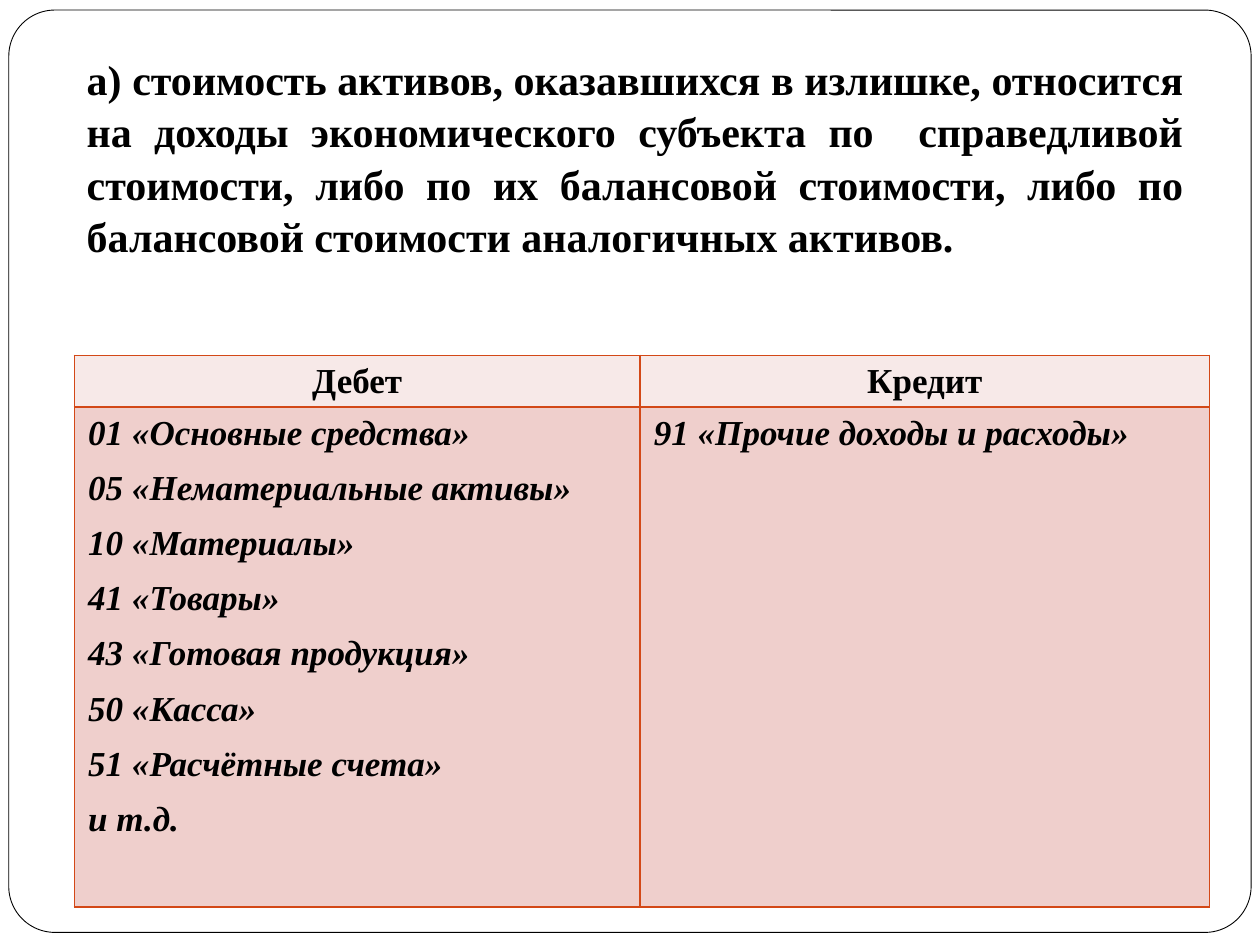
from dataclasses import dataclass

from lxml.etree import SubElement
from pptx import Presentation
from pptx.dml.color import RGBColor
from pptx.enum.shapes import MSO_SHAPE as Shape
from pptx.enum.text import PP_ALIGN as Align
from pptx.oxml.ns import qn
from pptx.util import Inches, Pt


@dataclass(frozen=True)
class Theme:
    font: str = "Times New Roman"
    ink: RGBColor = RGBColor(0, 0, 0)
    paper: RGBColor = RGBColor(255, 255, 255)
    header_fill: RGBColor = RGBColor.from_string("F7E9E8")
    body_fill: RGBColor = RGBColor.from_string("EFCFCC")
    border: str = "D34817"
    rule_size: int = 24
    table_size: int = 20


@dataclass(frozen=True)
class Side:
    title: str
    width: float
    accounts: tuple[str, ...]


THEME = Theme()
RULE = (
    "а) стоимость активов, оказавшихся в излишке, относится на доходы "
    "экономического субъекта по  справедливой стоимости, либо по их балансовой "
    "стоимости, либо по балансовой стоимости аналогичных активов."
)
SIDES = (
    Side("Дебет", 4.49, (
        "01 «Основные средства»",
        "05 «Нематериальные активы»",
        "10 «Материалы»",
        "41 «Товары»",
        "43 «Готовая продукция»",
        "50 «Касса»",
        "51 «Расчётные счета»",
        "и т.д.",
    )),
    Side("Кредит", 4.52, ("91 «Прочие доходы и расходы»",)),
)
ROW_HEIGHTS = (0.41, 3.97)


def style_runs(paragraph, size: int, italic: bool = False) -> None:
    for run in paragraph.runs:
        run.font.name = THEME.font
        run.font.size = Pt(size)
        run.font.bold = True
        run.font.italic = italic
        run.font.color.rgb = THEME.ink


def add_frame(slide) -> None:
    frame = slide.shapes.add_shape(
        Shape.ROUNDED_RECTANGLE, Inches(0.07), Inches(0.08), Inches(9.86), Inches(7.32))
    frame.adjustments[0] = 0.05
    frame.shadow.inherit = False
    frame.fill.solid()
    frame.fill.fore_color.rgb = THEME.paper
    frame.line.color.rgb = THEME.ink
    frame.line.width = Pt(0.5)


def add_rule(slide) -> None:
    box = slide.shapes.add_textbox(Inches(0.59), Inches(0.36), Inches(8.9), Inches(2.12))
    box.text_frame.word_wrap = True
    box.text_frame.text = RULE
    paragraph = box.text_frame.paragraphs[0]
    paragraph.alignment = Align.JUSTIFY
    paragraph.line_spacing = 1.04
    paragraph.space_after = Pt(12)
    style_runs(paragraph, THEME.rule_size)


def add_borders(cell) -> None:
    properties = cell._tc.get_or_add_tcPr()
    for position, edge in enumerate(("lnL", "lnR", "lnT", "lnB")):
        line = SubElement(properties, qn(f"a:{edge}"), w=str(Pt(1)))
        fill = SubElement(line, qn("a:solidFill"))
        SubElement(fill, qn("a:srgbClr"), val=THEME.border)
        properties.insert(position, line)


def fill_cell(cell, lines: tuple[str, ...], header: bool) -> None:
    cell.margin_left = cell.margin_right = Inches(0.01)
    cell.margin_top = cell.margin_bottom = Inches(0.01)
    cell.fill.solid()
    cell.fill.fore_color.rgb = THEME.header_fill if header else THEME.body_fill
    add_borders(cell)
    cell.text_frame.text = "\n".join(lines)
    for paragraph in cell.text_frame.paragraphs:
        paragraph.line_spacing = 1.15
        if header:
            paragraph.alignment = Align.CENTER
        else:
            paragraph.space_before = Pt(6)
            indent = paragraph._p.get_or_add_pPr()
            indent.set("marL", str(Inches(0.1)))
            indent.set("indent", "0")
        style_runs(paragraph, THEME.table_size, italic=not header)


def add_entries(slide) -> None:
    entries = slide.shapes.add_table(
        len(ROW_HEIGHTS), len(SIDES), Inches(0.59), Inches(2.82),
        Inches(sum(side.width for side in SIDES)), Inches(sum(ROW_HEIGHTS))).table
    for row, height in zip(entries.rows, ROW_HEIGHTS):
        row.height = Inches(height)
    for index, side in enumerate(SIDES):
        entries.columns[index].width = Inches(side.width)
        fill_cell(entries.cell(0, index), (side.title,), header=True)
        fill_cell(entries.cell(1, index), side.accounts, header=False)


def main() -> None:
    deck = Presentation()
    deck.slide_width, deck.slide_height = Inches(10), Inches(7.5)
    slide = deck.slides.add_slide(deck.slide_layouts[6])
    add_frame(slide)
    add_rule(slide)
    add_entries(slide)
    deck.save("out.pptx")


if __name__ == "__main__":
    main()
